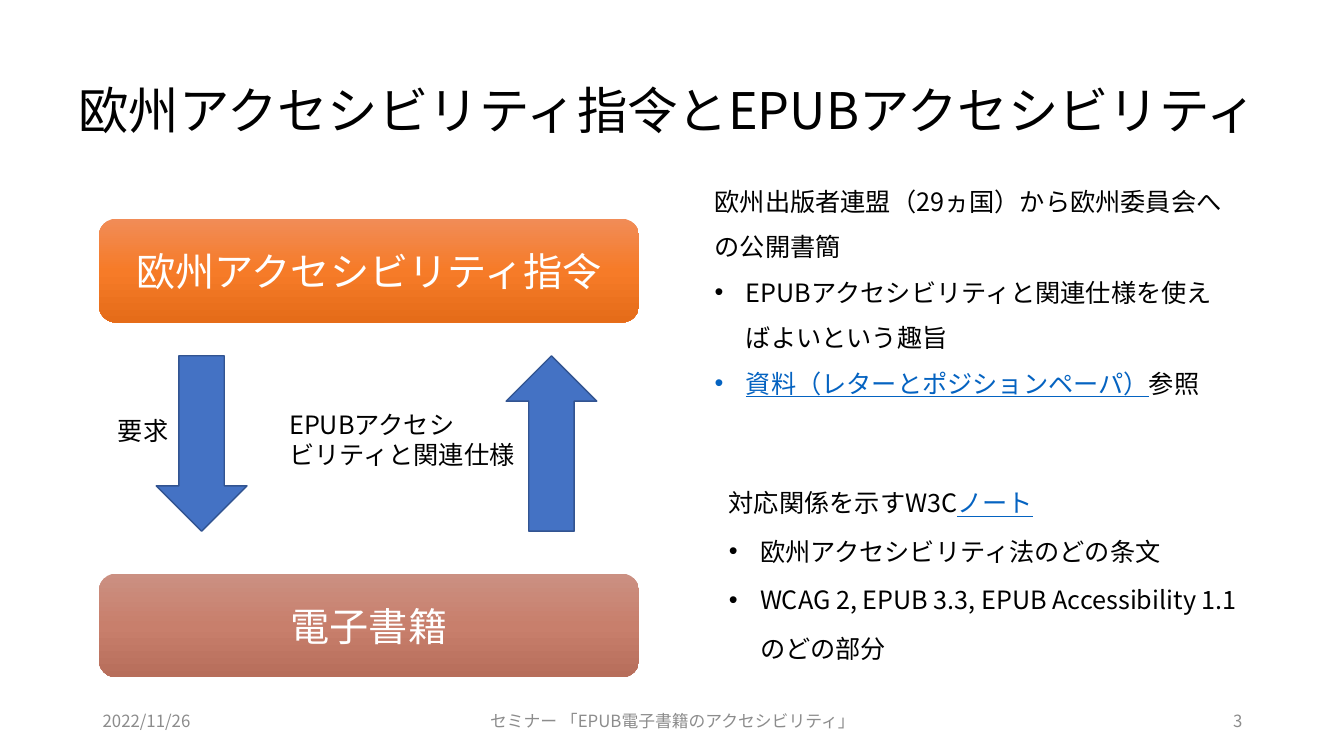
"""Build a slide on the European Accessibility Act and EPUB accessibility."""
from copy import deepcopy
from dataclasses import dataclass

from lxml.etree import SubElement
from pptx import Presentation
from pptx.dml.color import RGBColor
from pptx.enum.shapes import MSO_SHAPE
from pptx.enum.text import MSO_ANCHOR, PP_ALIGN
from pptx.oxml.ns import qn
from pptx.util import Inches, Pt


@dataclass(frozen=True)
class Theme:
    font: str = "Noto Sans CJK JP"
    black: str = "000000"
    white: str = "FFFFFF"
    grey: str = "8C8C8C"
    link: str = "0563C1"
    arrow: str = "4472C4"
    arrow_edge: str = "325491"
    orange: tuple = ("F18C57", "F67B28", "E56C19")
    brick: tuple = ("CB9082", "C87F6C", "B76E5B")
    title: int = 36
    block: int = 28
    body: int = 18
    footer: int = 12


theme = Theme()
deck = Presentation()
deck.slide_width, deck.slide_height = Inches(13.33), Inches(7.5)
page = deck.slides.add_slide(deck.slide_layouts[6])


def write(paragraphs, at=None, box=None, size=theme.body, color=theme.black,
          align=PP_ALIGN.LEFT, anchor=MSO_ANCHOR.TOP, spacing=1.0, side=0.1, edge=0.05):
    """Write paragraphs of (text, linked) spans; paragraphs after the first are bulleted."""
    box = box or page.shapes.add_textbox(*map(Inches, at))
    frame = box.text_frame
    frame.word_wrap, frame.vertical_anchor = True, anchor
    frame.margin_left = frame.margin_right = Inches(side)
    frame.margin_top = frame.margin_bottom = Inches(edge)
    for index, spans in enumerate(paragraphs):
        para = frame.add_paragraph() if index else frame.paragraphs[0]
        para.alignment, para.line_spacing = align, spacing
        if index:
            properties = para._p.get_or_add_pPr()
            properties.set("marL", str(Inches(0.31)))
            properties.set("indent", str(Inches(-0.31)))
            SubElement(properties, qn("a:buFont"), typeface="Arial")
            SubElement(properties, qn("a:buChar"), char="•")
        for text, linked in spans:
            for number, line in enumerate(text.split("\n")):
                if number:
                    para.add_line_break()
                span = para.add_run()
                span.text = line
                span.font.size, span.font.name = Pt(size), theme.font
                span.font.color.rgb = RGBColor.from_string(theme.link if linked else color)
                span.font.underline = linked
                SubElement(span._r.get_or_add_rPr(), qn("a:ea"), typeface=theme.font)


write([[("欧州アクセシビリティ指令とEPUBアクセシビリティ", False)]], at=(0.68, 0.4, 12.07, 1.45),
      size=theme.title, anchor=MSO_ANCHOR.MIDDLE, spacing=0.9)

block_left, block_width, block_height = 0.98, 5.36, 1.03
for label, top, colors in (("欧州アクセシビリティ指令", 2.17, theme.orange),
                           ("電子書籍", 5.69, theme.brick)):
    block = page.shapes.add_shape(MSO_SHAPE.ROUNDED_RECTANGLE, *map(
        Inches, (block_left, top, block_width, block_height)))
    block.shadow.inherit = False
    block.line.fill.background()
    block.fill.gradient()
    block.fill.gradient_angle = 270
    stop_list = block._element.spPr.find(".//" + qn("a:gsLst"))
    stop_list.insert(1, deepcopy(stop_list[0]))
    for stop, position, color in zip(block.fill.gradient_stops, (0, 0.5, 1), colors):
        stop.position, stop.color.rgb = position, RGBColor.from_string(color)
    write([[(label, False)]], box=block, size=theme.block, color=theme.white,
          align=PP_ALIGN.CENTER, anchor=MSO_ANCHOR.MIDDLE, side=0.22, edge=0)

for kind, left in ((MSO_SHAPE.DOWN_ARROW, 1.55), (MSO_SHAPE.UP_ARROW, 5.02)):
    arrow = page.shapes.add_shape(kind, *map(Inches, (left, 3.53, 0.9, 1.74)))
    arrow.shadow.inherit = False
    arrow.fill.solid()
    arrow.fill.fore_color.rgb = RGBColor.from_string(theme.arrow)
    arrow.line.color.rgb = RGBColor.from_string(theme.arrow_edge)
    arrow.line.width = Pt(1)

write([[("要求", False)]], at=(1.07, 4.07, 1.35, 0.4))
write([[("EPUBアクセシ\nビリティと関連仕様", False)]], at=(2.77, 4.01, 2.5, 0.71))

write([[("欧州出版者連盟（29ヵ国）から欧州委員会への公開書簡", False)],
       [("EPUBアクセシビリティと関連仕様を使えばよいという趣旨", False)],
       [("資料（レターとポジションペーパ）", True), ("参照", False)]],
      at=(6.99, 1.65, 5.24, 2.68), spacing=1.5)
write([[("対応関係を示すW3C", False), ("ノート", True)],
       [("欧州アクセシビリティ法のどの条文", False)],
       [("WCAG 2, EPUB 3.3, EPUB Accessibility 1.1のどの部分", False)]],
      at=(7.13, 4.61, 5.24, 1.99), spacing=1.6)

for text, left, width, align in (
        ("2022/11/26", 0.92, 3, PP_ALIGN.LEFT),
        ("セミナー 「EPUB電子書籍のアクセシビリティ」", 4.42, 4.5, PP_ALIGN.CENTER),
        ("3", 9.42, 3, PP_ALIGN.RIGHT)):
    write([[(text, False)]], at=(left, 6.95, width, 0.4), size=theme.footer,
          color=theme.grey, align=align, anchor=MSO_ANCHOR.MIDDLE)

deck.save("out.pptx")
